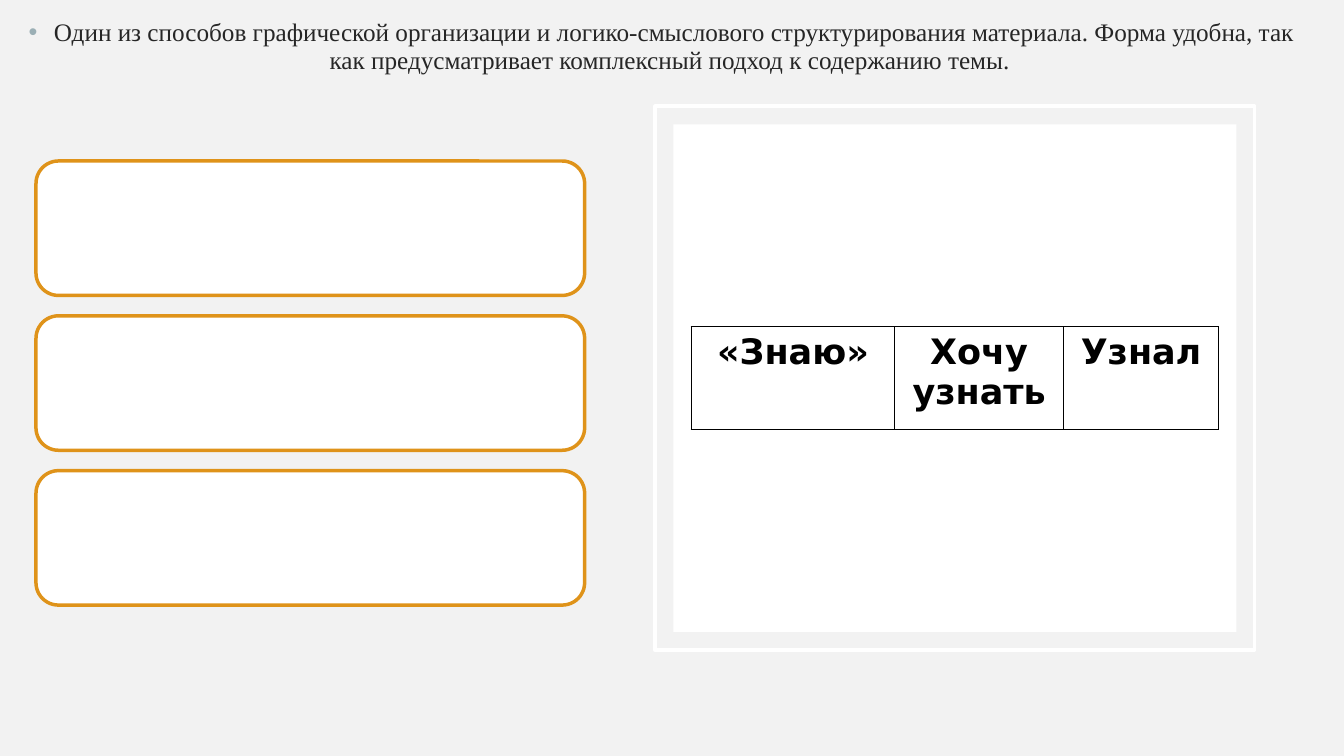
from dataclasses import dataclass

from lxml.etree import SubElement
from pptx import Presentation
from pptx.dml.color import RGBColor
from pptx.enum.shapes import MSO_SHAPE
from pptx.enum.text import PP_ALIGN
from pptx.oxml.ns import qn
from pptx.util import Pt

INTRO = (
    "Один из способов графической организации и логико-смыслового "
    "структурирования материала. Форма удобна, так как предусматривает "
    "комплексный подход к содержанию темы."
)
COLUMNS = [("«Знаю»", 145.3), ("Хочу узнать", 120.6), ("Узнал", 110.8)]
CARD_COUNT = 3


@dataclass(frozen=True)
class Theme:
    background: str = "F2F2F2"
    white: str = "FFFFFF"
    orange: str = "DF931A"
    black: str = "000000"
    ink: str = "262626"
    bullet: str = "9BAFB5"
    intro_font: str = "Times New Roman"
    table_font: str = "DejaVu Sans"
    intro_size: float = 18
    table_size: float = 25
    outline: float = 2.5
    border: float = 1


THEME = Theme()


def color(value):
    return RGBColor.from_string(value)


def write_text(frame, text, *, font, size, ink, bold=False, bullet=None, spacing=None):
    frame.word_wrap = True
    para = frame.paragraphs[0]
    if bullet:
        properties = para._p.get_or_add_pPr()
        properties.set("marL", "0")
        properties.set("indent", str(-Pt(18)))
        bullet_color = SubElement(properties, qn("a:buClr"))
        SubElement(bullet_color, qn("a:srgbClr"), val=bullet)
        SubElement(properties, qn("a:buFont"), typeface="Arial")
        SubElement(properties, qn("a:buChar"), char="•")
    para.alignment = PP_ALIGN.CENTER
    if spacing:
        para.line_spacing = spacing
    span = para.add_run()
    span.text = text
    span.font.name = font
    span.font.size = Pt(size)
    span.font.bold = bold
    span.font.color.rgb = color(ink)


def add_panel(page, kind, left, top, width, height, fill=None, line=None):
    panel = page.shapes.add_shape(kind, Pt(left), Pt(top), Pt(width), Pt(height))
    panel.shadow.inherit = False
    if fill:
        panel.fill.solid()
        panel.fill.fore_color.rgb = color(fill)
    else:
        panel.fill.background()
    if line:
        panel.line.color.rgb = color(line)
        panel.line.width = Pt(THEME.outline)
    else:
        panel.line.fill.background()


def add_borders(cell):
    properties = cell._tc.get_or_add_tcPr()
    for position, side in enumerate(("lnL", "lnR", "lnT", "lnB")):
        line = properties.makeelement(qn(f"a:{side}"), {"w": str(Pt(THEME.border))})
        fill = SubElement(line, qn("a:solidFill"))
        SubElement(fill, qn("a:srgbClr"), val=THEME.black)
        properties.insert(position, line)


def add_cards(page):
    left, top, width, height, step = 25.7, 115, 391.9, 96, 110.6
    for index in range(CARD_COUNT):
        add_panel(page, MSO_SHAPE.ROUNDED_RECTANGLE, left, top + index * step,
                  width, height, THEME.white, THEME.orange)


def add_frame(page):
    left, top, width, height, gap = 468, 75.8, 428.2, 388.6, 13
    add_panel(page, MSO_SHAPE.RECTANGLE, left, top, width, height, line=THEME.white)
    add_panel(page, MSO_SHAPE.RECTANGLE, left + gap, top + gap,
              width - 2 * gap, height - 2 * gap, fill=THEME.white)


def add_knowledge_table(page):
    width = sum(column_width for _, column_width in COLUMNS)
    holder = page.shapes.add_table(1, len(COLUMNS), Pt(493.8), Pt(233.4), Pt(width), Pt(73.4))
    table = holder.table
    for index, (heading, column_width) in enumerate(COLUMNS):
        table.columns[index].width = Pt(column_width)
        cell = table.cell(0, index)
        cell.margin_left = cell.margin_right = Pt(3.6)
        cell.margin_top = cell.margin_bottom = Pt(3.6)
        cell.fill.solid()
        cell.fill.fore_color.rgb = color(THEME.white)
        add_borders(cell)
        write_text(cell.text_frame, heading, font=THEME.table_font,
                   size=THEME.table_size, ink=THEME.black, bold=True)


def add_intro(page):
    box = page.shapes.add_textbox(Pt(10.8), Pt(10.8), Pt(935.3), Pt(46.8))
    write_text(box.text_frame, INTRO, font=THEME.intro_font, size=THEME.intro_size,
               ink=THEME.ink, bullet=THEME.bullet, spacing=0.9)


def main():
    deck = Presentation()
    deck.slide_width, deck.slide_height = Pt(960), Pt(540)
    page = deck.slides.add_slide(deck.slide_layouts.get_by_name("Blank"))
    page.background.fill.solid()
    page.background.fill.fore_color.rgb = color(THEME.background)
    add_cards(page)
    add_frame(page)
    add_knowledge_table(page)
    add_intro(page)
    deck.save("out.pptx")


if __name__ == "__main__":
    main()
